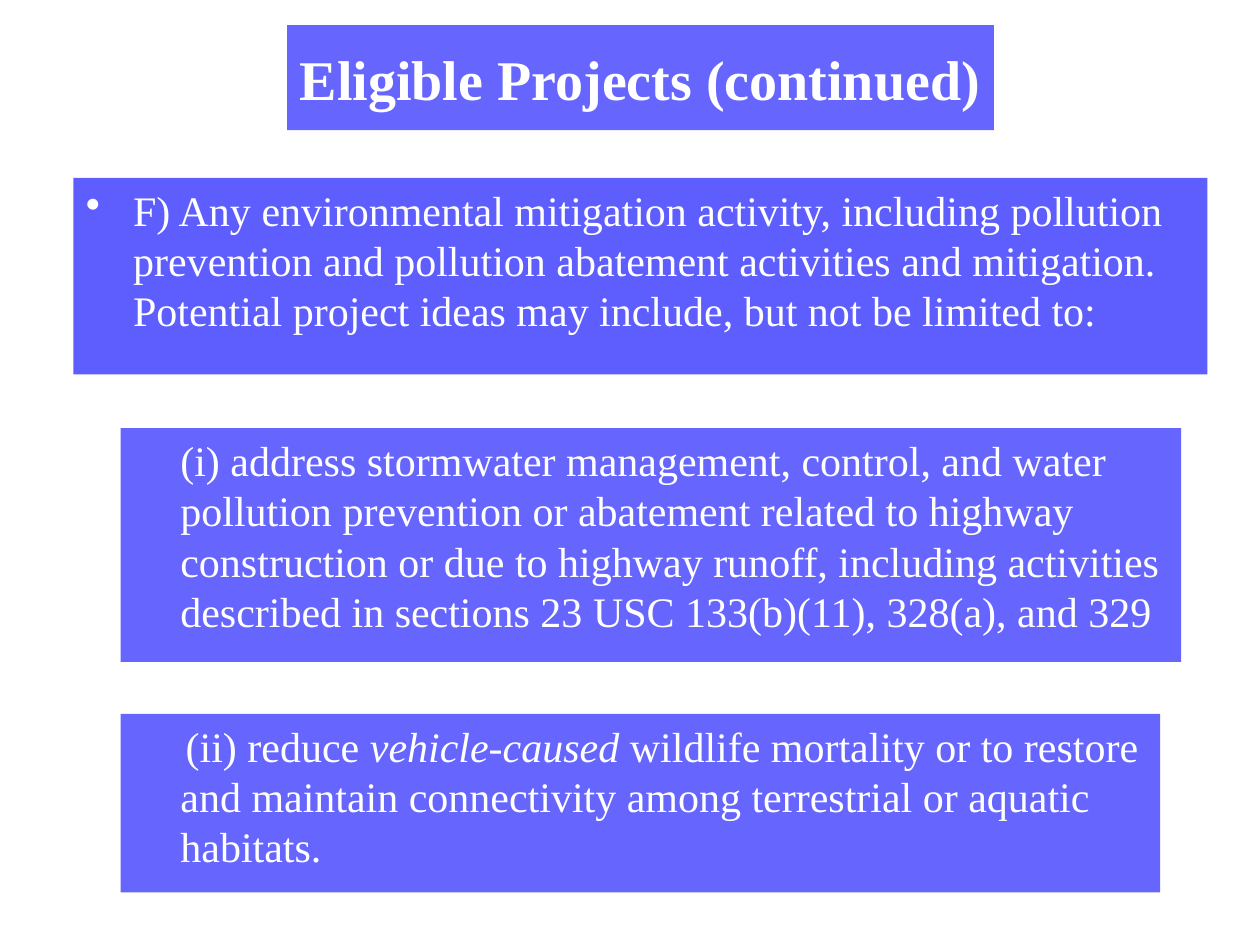
from lxml import etree
from pptx import Presentation
from pptx.dml.color import RGBColor
from pptx.enum.shapes import MSO_SHAPE
from pptx.enum.text import MSO_ANCHOR, PP_ALIGN
from pptx.oxml.ns import qn
from pptx.util import Pt

RECTANGLE = MSO_SHAPE.RECTANGLE
TOP, MIDDLE = MSO_ANCHOR.TOP, MSO_ANCHOR.MIDDLE
LEFT, CENTER = PP_ALIGN.LEFT, PP_ALIGN.CENTER
FONT = "Times New Roman"
BLUE, WHITE = "0000FF", "FFFFFF"
HANGING = 27


def color(hex_string):
    return RGBColor.from_string(hex_string)


def fill_panel(panel, box, opacity, anchor):
    """Place a panel, give it a see-through blue fill and return its paragraph."""
    panel.left, panel.top, panel.width, panel.height = [Pt(v) for v in box]
    panel.fill.solid()
    panel.fill.fore_color.rgb = color(BLUE)
    rgb = panel.fill._xPr.find(qn("a:solidFill"))[0]
    etree.SubElement(rgb, qn("a:alpha")).set("val", str(opacity * 1000))
    panel.line.fill.background()
    frame = panel.text_frame
    frame.word_wrap = True
    frame.vertical_anchor = anchor
    return frame.paragraphs[0]


prs = Presentation()
prs.slide_width, prs.slide_height = Pt(720), Pt(540)
slide = prs.slides.add_slide(prs.slide_layouts[5])

# Title
heading = fill_panel(slide.shapes.title, (164, 14.4, 404, 60), 60, MIDDLE)
heading.alignment = CENTER
heading_run = heading.add_run()
heading_run.text = "Eligible Projects (continued)"
heading_run.font.name = FONT
heading_run.font.size = Pt(32)
heading_run.font.bold = True
heading_run.font.color.rgb = color(WHITE)

# Project panels: box, opacity, bullet, first-line indent, runs (text, italic)
panels = [
    ((42, 101.7, 648, 112.3), 63, "•", -HANGING, [
        ("F) Any environmental mitigation activity, including pollution "
         "prevention and pollution abatement activities and mitigation. "
         "Potential project ideas may include, but not be limited to:", False)]),
    ((69, 244.6, 606, 133.7), 60, None, 0, [
        ("(i) address stormwater management, control, and water pollution "
         "prevention or abatement related to highway construction or due to "
         "highway runoff, including activities described in sections "
         "23 USC 133(b)(11), 328(a), and 329", False)]),
    ((69, 408, 594, 102), 60, None, 3, [
        ("(ii) reduce ", False),
        ("vehicle-caused", True),
        (" wildlife mortality or to restore and maintain connectivity among "
         "terrestrial or aquatic habitats.", False)]),
]

for box, opacity, bullet, first_indent, runs in panels:
    panel = slide.shapes.add_shape(RECTANGLE, 0, 0, 0, 0)
    panel.shadow.inherit = False
    project = fill_panel(panel, box, opacity, TOP)
    project.alignment = LEFT

    # Indent and bullet
    properties = project._p.get_or_add_pPr()
    properties.set("marL", str(Pt(HANGING)))
    properties.set("indent", str(Pt(first_indent)))
    if bullet:
        etree.SubElement(properties, qn("a:buChar")).set("char", bullet)

    for text, italic in runs:
        run = project.add_run()
        run.text = text
        run.font.name = FONT
        run.font.size = Pt(24)
        run.font.italic = italic
        run.font.color.rgb = color(WHITE)

prs.save("out.pptx")
